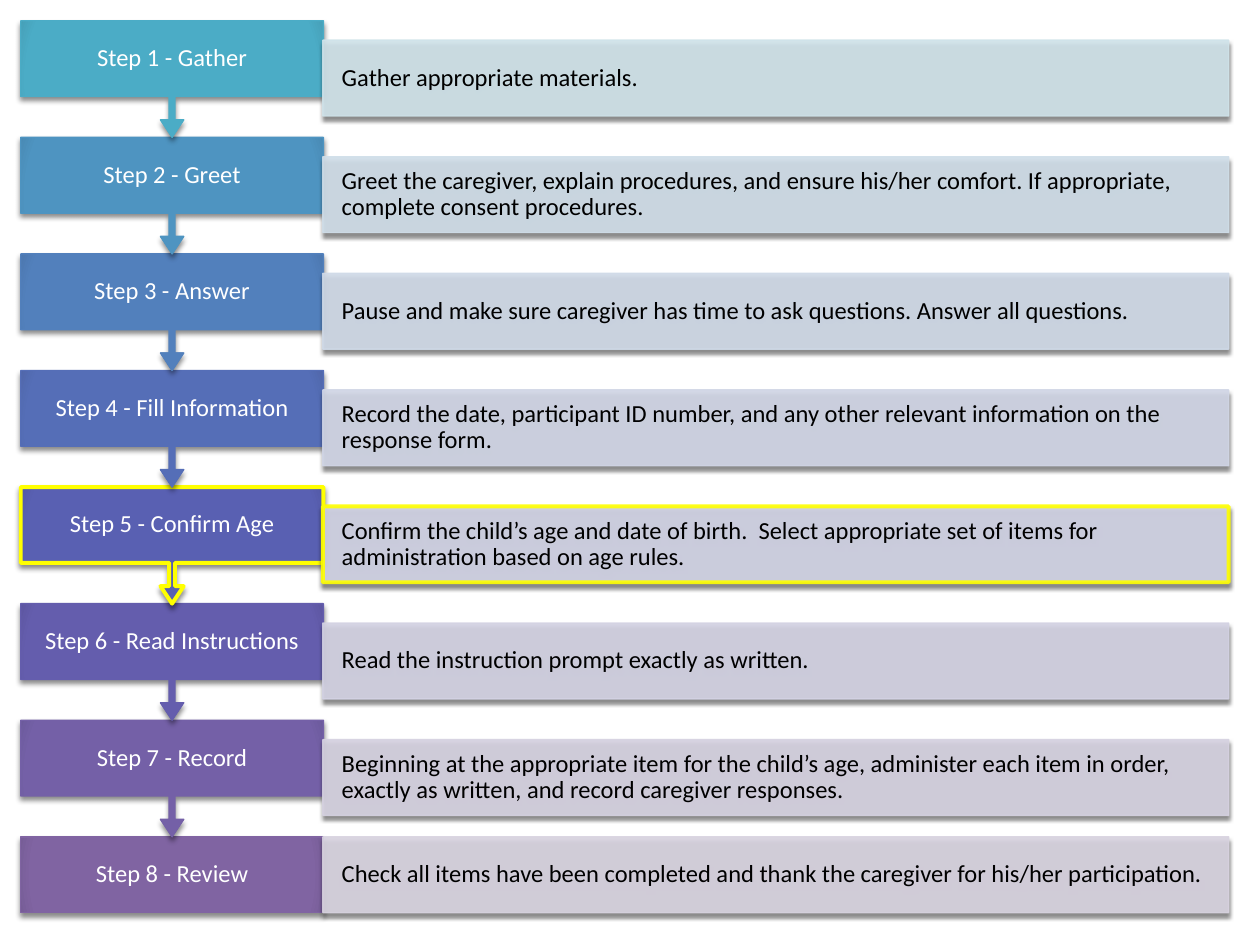
"""Build an eight-step administration flow with a description beside each step."""
from dataclasses import dataclass

from pptx import Presentation
from pptx.dml.color import RGBColor as RGB
from pptx.enum.shapes import MSO_SHAPE as Shape
from pptx.enum.text import MSO_ANCHOR as Anchor, PP_ALIGN as Align
from pptx.oxml import parse_xml
from pptx.oxml.ns import nsdecls, qn
from pptx.util import Cm, Pt

STEPS = [
    ("Step 1 - Gather", "Gather appropriate materials.",
     "4BACC6", "46A0B8", "D0E3EA"),
    ("Step 2 - Greet",
     "Greet the caregiver, explain procedures, and ensure his/her comfort. "
     "If appropriate, complete consent procedures.",
     "4E94C1", "498AB4", "D0DEE9"),
    ("Step 3 - Answer",
     "Pause and make sure caregiver has time to ask questions. Answer all questions.",
     "5280BC", "4C77AF", "D0DAE8"),
    ("Step 4 - Fill Information",
     "Record the date, participant ID number, and any other relevant information "
     "on the response form.",
     "556EB7", "5067AA", "D1D6E6"),
    ("Step 5 - Confirm Age",
     "Confirm the child’s age and date of birth.  Select appropriate set of items "
     "for administration based on age rules.",
     "5960B2", "5359A6", "D1D3E5"),
    ("Step 6 - Read Instructions", "Read the instruction prompt exactly as written.",
     "645DAD", "5D56A1", "D3D2E3"),
    ("Step 7 - Record",
     "Beginning at the appropriate item for the child’s age, administer each item "
     "in order, exactly as written, and record caregiver responses.",
     "7460A7", "6C5A9C", "D6D2E1"),
    ("Step 8 - Review",
     "Check all items have been completed and thank the caregiver for his/her participation.",
     "8064A2", "775D97", "D8D3E0"),
]
HIGHLIGHTED = 4
LAST = len(STEPS) - 1

TOP, PITCH, BOX_H, DETAIL_DROP = 0.42, 2.35, 1.53, 0.39
STEP_X, STEP_W = 0.42, 6.1
DETAIL_X, DETAIL_W = 6.51, 18.26
CALLOUT = (0.05, 0.1, 0.15, 0.65)


@dataclass(frozen=True)
class Theme:
    """Hold colours, type and line sizes."""
    font: str = "Calibri"
    size: float = 14
    step_text: str = "FFFFFF"
    detail_text: str = "000000"
    highlight: str = "FFFF00"
    line: float = 0.79
    highlight_line: float = 2.25
    opacity: int = 90


THEME = Theme()


def add_shadow(sp, opacity, blur):
    """Cast a soft shadow straight down."""
    sp.shadow.inherit = False
    sp._element.spPr.find(qn("a:effectLst")).append(parse_xml(
        f'<a:outerShdw {nsdecls("a")} blurRad="{Pt(blur)}" dist="{Pt(2)}" '
        'dir="5400000" rotWithShape="0"><a:srgbClr val="000000">'
        f'<a:alpha val="{opacity * 1000}"/></a:srgbClr></a:outerShdw>'))


def set_gradient(sp, colour, edge):
    """Fill with a circular gradient that darkens at its end."""
    sp.fill.background()
    stops = "".join(f'<a:gs pos="{pos * 1000}"><a:srgbClr val="{c}"/></a:gs>'
                    for pos, c in ((0, colour), (90, colour), (100, edge)))
    spPr = sp._element.spPr
    spPr.replace(spPr.find(qn("a:noFill")), parse_xml(
        f'<a:gradFill {nsdecls("a")} rotWithShape="1"><a:gsLst>{stops}</a:gsLst>'
        '<a:path path="circle"><a:fillToRect l="100000" t="100000" r="100000" '
        'b="100000"/></a:path></a:gradFill>'))


def set_opacity(sp, percent):
    """Make the solid fill and line slightly transparent."""
    for colour in sp._element.spPr.iter(qn("a:srgbClr")):
        colour.append(parse_xml(f'<a:alpha {nsdecls("a")} val="{percent * 1000}"/>'))


def set_line(sp, colour, highlighted):
    """Outline in the shape's own colour or in the highlight."""
    sp.line.color.rgb = RGB.from_string(THEME.highlight if highlighted else colour)
    sp.line.width = Pt(THEME.highlight_line if highlighted else THEME.line)


def write(sp, text, colour, align, inset_x, inset_y):
    """Set one vertically centred paragraph."""
    tf = sp.text_frame
    tf.word_wrap = True
    tf.vertical_anchor = Anchor.MIDDLE
    tf.margin_left = tf.margin_right = Cm(inset_x)
    tf.margin_top = tf.margin_bottom = Cm(inset_y)
    p = tf.paragraphs[0]
    p.alignment, p.line_spacing = align, 0.9
    r = p.add_run()
    r.text = text
    r.font.name, r.font.size = THEME.font, Pt(THEME.size)
    r.font.color.rgb = RGB.from_string(colour)


def add_step(s, i, label, colour, edge):
    """Add a step box, with an arrow to the next step unless it is the last."""
    last = i == LAST
    sp = s.shapes.add_shape(
        Shape.RECTANGLE if last else Shape.DOWN_ARROW_CALLOUT,
        Cm(STEP_X), Cm(TOP + i * PITCH), Cm(STEP_W), Cm(BOX_H if last else PITCH))
    if not last:
        for n, value in enumerate(CALLOUT):
            sp.adjustments[n] = value
    set_gradient(sp, colour, edge)
    set_line(sp, colour, i == HIGHLIGHTED)
    add_shadow(sp, 45, 3)
    write(sp, label, THEME.step_text, Align.CENTER, 0.43, 0.28)


def add_detail(s, i, text, colour):
    """Add the description bar, set lower than its step except for the last."""
    drop = 0 if i == LAST else DETAIL_DROP
    sp = s.shapes.add_shape(Shape.RECTANGLE, Cm(DETAIL_X), Cm(TOP + i * PITCH + drop),
                            Cm(DETAIL_W), Cm(BOX_H))
    sp.fill.solid()
    sp.fill.fore_color.rgb = RGB.from_string(colour)
    set_line(sp, colour, i == HIGHLIGHTED)
    set_opacity(sp, THEME.opacity)
    add_shadow(sp, 50, 2.5)
    write(sp, text, THEME.detail_text, Align.LEFT, 0.38, 0.48)


def main():
    """Create and save the slide."""
    prs = Presentation()
    prs.slide_width, prs.slide_height = Cm(25.4), Cm(19.05)
    s = prs.slides.add_slide(prs.slide_layouts[6])
    for i, (label, text, colour, edge, tint) in reversed(list(enumerate(STEPS))):
        add_step(s, i, label, colour, edge)
        add_detail(s, i, text, tint)
    prs.save("out.pptx")


if __name__ == "__main__":
    main()
